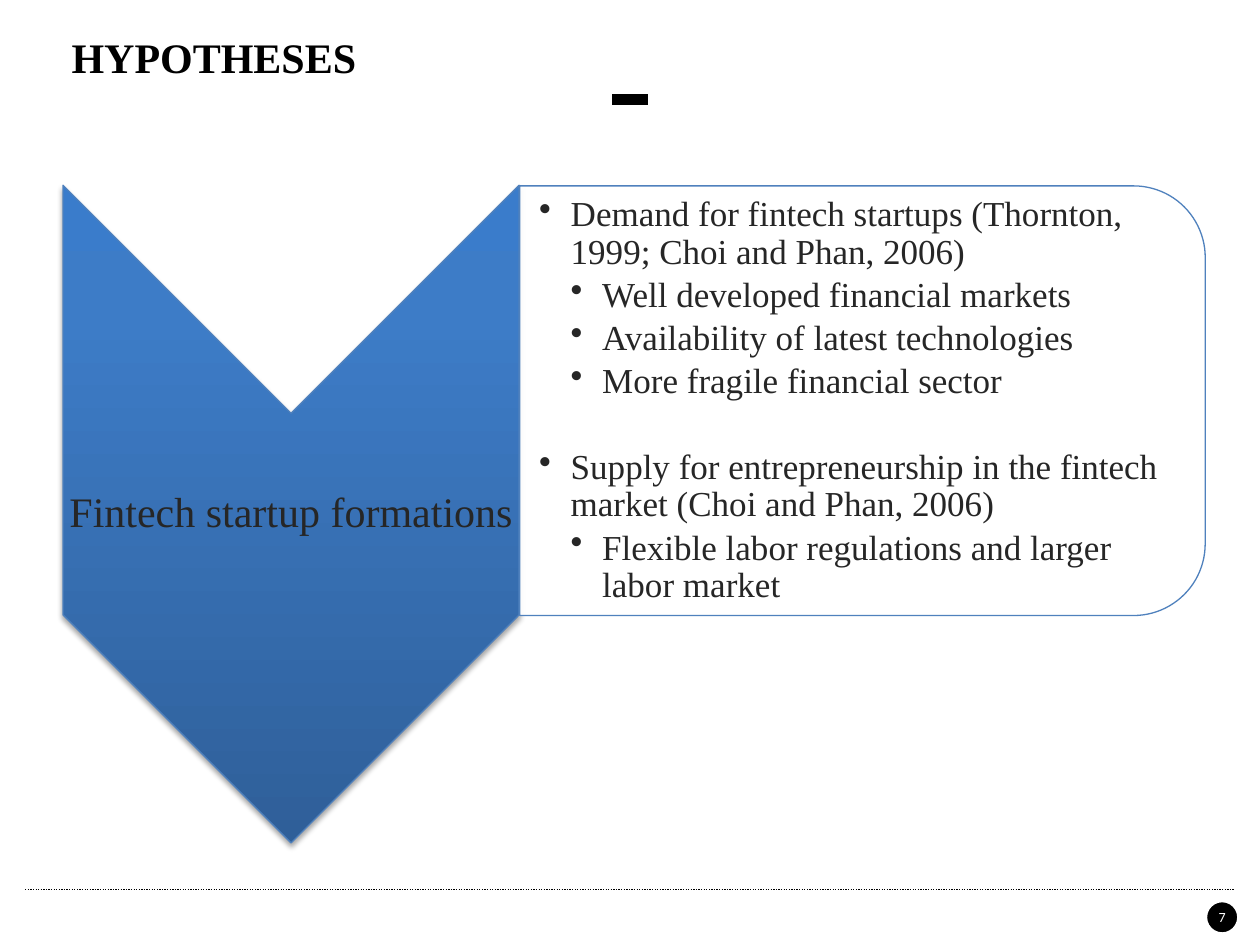
from dataclasses import dataclass

from lxml import etree
from pptx import Presentation
from pptx.dml.color import RGBColor
from pptx.enum.dml import MSO_LINE
from pptx.enum.shapes import MSO_CONNECTOR, MSO_SHAPE
from pptx.enum.text import MSO_ANCHOR, PP_ALIGN
from pptx.oxml import parse_xml
from pptx.oxml.ns import nsdecls, qn
from pptx.util import Inches, Pt

STRAIGHT = MSO_CONNECTOR.STRAIGHT
CHEVRON = MSO_SHAPE.CHEVRON
OVAL = MSO_SHAPE.OVAL
ROUNDED_SIDE = MSO_SHAPE.ROUND_2_SAME_RECTANGLE
DOTTED = MSO_LINE.ROUND_DOT
MIDDLE = MSO_ANCHOR.MIDDLE
LEFT, CENTER = PP_ALIGN.LEFT, PP_ALIGN.CENTER


@dataclass(frozen=True)
class Theme:
    black: str = "000000"
    white: str = "FFFFFF"
    body: str = "262626"
    outline: str = "4F81BD"
    gradient: tuple = ((0, "2F5F99"), (80, "3D7CC7"), (100, "3A7CCB"))
    font: str = "Times New Roman"
    number_font: str = "Calibri"
    heading_size: int = 24
    body_size: int = 20
    number_size: int = 8


THEME = Theme()

HYPOTHESES = [
    (0, "Demand for fintech startups (Thornton, 1999; Choi and Phan, 2006)"),
    (1, "Well developed financial markets"),
    (1, "Availability of latest technologies"),
    (1, "More fragile financial sector"),
    (0, "Supply for entrepreneurship in the fintech market (Choi and Phan, 2006)"),
    (1, "Flexible labor regulations and larger labor market"),
]


def write(paragraph, text, size=THEME.body_size, color=THEME.body, font=THEME.font,
          bold=False, align=LEFT, spacing=None, before=0, after=0, bullet_level=None):
    if bullet_level is not None:
        props = paragraph._p.get_or_add_pPr()
        props.set("marL", str(Inches(0.25 * (bullet_level + 1))))
        props.set("indent", str(Inches(-0.25)))
        etree.SubElement(props, qn("a:buChar")).set("char", "•")
        paragraph.level = bullet_level
    paragraph.alignment = align
    if spacing:
        paragraph.line_spacing = spacing
    if before:
        paragraph.space_before = Pt(before)
    paragraph.space_after = Pt(after)
    run = paragraph.add_run()
    run.text = text
    run.font.size = Pt(size)
    run.font.name = font
    run.font.bold = bold
    run.font.color.rgb = RGBColor.from_string(color)


class SlideBuilder:
    def __init__(self, slide, theme):
        self.slide = slide
        self.theme = theme

    def line(self, x1, x2, y, width, dash=None):
        rule = self.slide.shapes.add_connector(
            STRAIGHT, Inches(x1), Inches(y), Inches(x2), Inches(y))
        rule.line.color.rgb = RGBColor.from_string(self.theme.black)
        rule.line.width = Pt(width)
        if dash:
            rule.line.dash_style = dash
        etree.SubElement(rule._element.spPr, qn("a:effectLst"))

    def shape(self, kind, left, top, width, height, line, line_width,
              fill=None, rotation=0):
        item = self.slide.shapes.add_shape(
            kind, Inches(left), Inches(top), Inches(width), Inches(height))
        item.shadow.inherit = False
        item.rotation = rotation
        item.line.color.rgb = RGBColor.from_string(line)
        item.line.width = Pt(line_width)
        if fill:
            item.fill.solid()
            item.fill.fore_color.rgb = RGBColor.from_string(fill)
        return item

    def shade(self, item):
        """Give a shape the upright theme gradient and a soft shadow below."""
        stops = "".join(
            f'<a:gs pos="{position * 1000}"><a:srgbClr val="{color}"/></a:gs>'
            for position, color in self.theme.gradient)
        gradient = parse_xml(
            f'<a:gradFill {nsdecls("a")} rotWithShape="0"><a:gsLst>{stops}</a:gsLst>'
            '<a:lin ang="16200000" scaled="0"/></a:gradFill>')
        shadow = parse_xml(
            f'<a:outerShdw {nsdecls("a")} blurRad="{Pt(3.1)}" dist="{Pt(1.8)}" '
            f'dir="5400000" rotWithShape="0"><a:srgbClr val="{self.theme.black}">'
            '<a:alpha val="35000"/></a:srgbClr></a:outerShdw>')
        props = item._element.spPr
        props.find(qn("a:prstGeom")).addnext(gradient)
        props.find(qn("a:effectLst")).append(shadow)

    def set_opacity(self, item, percent):
        color = item._element.spPr.find(qn("a:solidFill"))[0]
        etree.SubElement(color, qn("a:alpha")).set("val", str(percent * 1000))

    def frame(self, item, insets, wrap=True):
        frame = item.text_frame
        frame.word_wrap = wrap
        frame.vertical_anchor = MIDDLE
        (frame.margin_left, frame.margin_top,
         frame.margin_right, frame.margin_bottom) = map(Inches, insets)
        return frame

    def text_box(self, left, top, width, height, insets):
        box = self.slide.shapes.add_textbox(
            Inches(left), Inches(top), Inches(width), Inches(height))
        return self.frame(box, insets)


def main():
    deck = Presentation()
    deck.slide_width, deck.slide_height = Inches(10), Inches(7.5)
    page = SlideBuilder(deck.slides.add_slide(deck.slide_layouts[6]), THEME)

    page.line(4.86, 5.14, 0.79, 6)
    page.line(0.2, 9.8, 7.06, 0.75, DOTTED)
    badge = page.shape(OVAL, 9.56, 7.14, 0.28, 0.28, THEME.white, 3, THEME.black)
    number = page.frame(badge, (0, 0, 0, 0), wrap=False)
    write(number.paragraphs[0], "7", size=THEME.number_size, color=THEME.white,
          font=THEME.number_font, align=CENTER)

    title = page.text_box(0.47, 0.2, 9.06, 0.5, (0.1, 0.05, 0.1, 0.05))
    write(title.paragraphs[0], "HYPOTHESES", size=THEME.heading_size,
          color=THEME.black, bold=True)

    arrow = page.shape(CHEVRON, -0.3, 2.27, 5.22, 3.62, THEME.outline, 0.75,
                       rotation=90)
    page.shade(arrow)
    topic = page.text_box(0.5, 3.28, 3.62, 1.6, (0.02, 0.02, 0.02, 0.02))
    write(topic.paragraphs[0], "Fintech startup formations",
          size=THEME.heading_size, align=CENTER, spacing=0.9)

    panel = page.shape(ROUNDED_SIDE, 5.14, 0.46, 3.41, 5.44, THEME.outline, 0.75,
                       THEME.white, rotation=90)
    page.set_opacity(panel, 90)
    points = page.text_box(4.12, 1.64, 5.27, 3.08, (0.16, 0.01, 0.01, 0.01))
    for index, (level, text) in enumerate(HYPOTHESES):
        paragraph = points.add_paragraph() if index else points.paragraphs[0]
        starts_group = index > 0 and level == 0
        write(paragraph, text, spacing=0.9, before=24.5 if starts_group else 0,
              after=3, bullet_level=level)

    deck.save("out.pptx")


if __name__ == "__main__":
    main()
